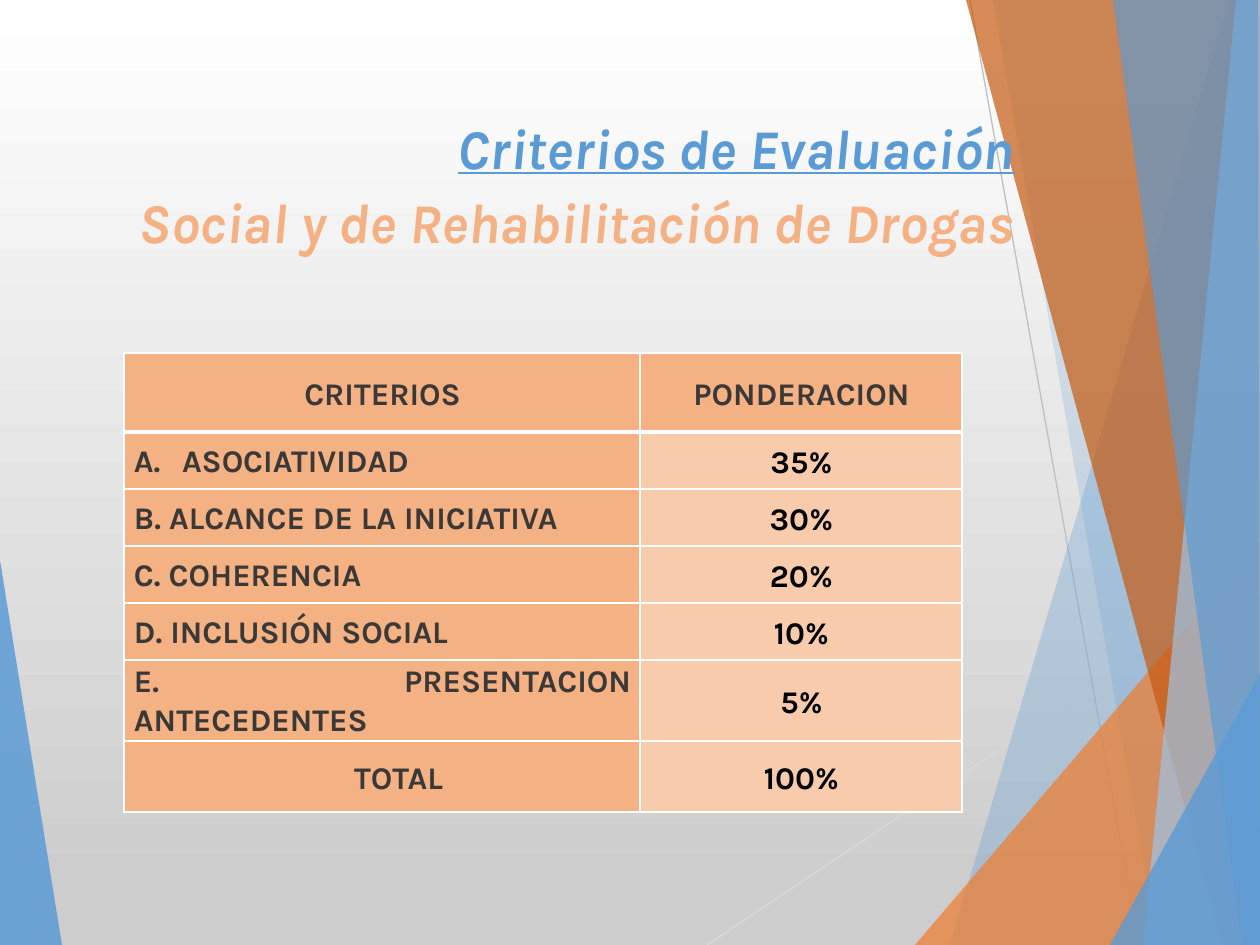
from lxml import etree
from pptx import Presentation
from pptx.dml.color import RGBColor
from pptx.enum.shapes import MSO_CONNECTOR
from pptx.enum.text import MSO_ANCHOR, PP_ALIGN
from pptx.oxml.ns import qn
from pptx.util import Pt

PX = 914400 / 126
FONT = "Karla"
STRAIGHT = MSO_CONNECTOR.STRAIGHT
TOP, MIDDLE = MSO_ANCHOR.TOP, MSO_ANCHOR.MIDDLE
CENTER, RIGHT, JUSTIFY = PP_ALIGN.CENTER, PP_ALIGN.RIGHT, PP_ALIGN.JUSTIFY

WHITE = RGBColor(0xFF, 0xFF, 0xFF)
BLACK = RGBColor(0x00, 0x00, 0x00)
DARK = RGBColor(0x3B, 0x38, 0x38)
BACK_GREY = RGBColor(0xCD, 0xCD, 0xCD)
LIGHT_GREY = RGBColor(0xD9, 0xD9, 0xD9)
MID_GREY = RGBColor(0xBF, 0xBF, 0xBF)
BLUE = RGBColor(0x5B, 0x9B, 0xD5)
LIGHT_BLUE = RGBColor(0x9D, 0xC3, 0xE6)
ORANGE = RGBColor(0xED, 0x7D, 0x31)
DARK_ORANGE = RGBColor(0xC5, 0x5A, 0x11)
PEACH = RGBColor(0xF4, 0xB1, 0x83)
PALE_PEACH = RGBColor(0xF8, 0xCB, 0xAD)


def px(length):
    return round(length * PX)


def add_text(paragraph, text, size, color):
    run = paragraph.add_run()
    run.text = text
    run.font.name = FONT
    run.font.size = Pt(size)
    run.font.bold = True
    run.font.color.rgb = color
    return run


presentation = Presentation()
presentation.slide_width = px(1260)
presentation.slide_height = px(945)
slide = presentation.slides.add_slide(presentation.slide_layouts[6])

background = slide.background.fill
background.gradient()
background.gradient_angle = 270
for stop, position, color in zip(background.gradient_stops, (0, 0.94), (WHITE, BACK_GREY)):
    stop.position = position
    stop.color.rgb = color

# Thin lines behind the facets
for x1, y1, x2, y2, color in (
    (707, 945, 1260, 576, LIGHT_GREY),
    (970, 0, 1139, 945, MID_GREY),
):
    line = slide.shapes.add_connector(STRAIGHT, px(x1), px(y1), px(x2), px(y2))
    line.line.color.rgb = color
    line.line.width = Pt(0.75)
    etree.SubElement(line._element.spPr, qn("a:effectLst"))

# Translucent facets: colour, opacity in percent, corners
FACETS = (
    (BLUE, 85, [(0, 560), (62, 945), (0, 945)]),
    (BLUE, 30, [(1229, 0), (950, 945), (1260, 945), (1260, 0)]),
    (BLUE, 20, [(993, 0), (1158, 945), (1260, 945), (1260, 0)]),
    (ORANGE, 72, [(915, 945), (1260, 541), (1260, 945)]),
    (DARK_ORANGE, 70, [(966, 0), (1222, 945), (1260, 945), (1260, 0)]),
    (LIGHT_BLUE, 70, [(1236, 0), (1143, 945), (1260, 945), (1260, 0)]),
    (BLUE, 65, [(1113, 0), (1242, 945), (1260, 945), (1258, 0)]),
    (BLUE, 80, [(1110, 945), (1260, 674), (1260, 945)]),
)
for color, opacity, corners in FACETS:
    builder = slide.shapes.build_freeform(*corners[0], scale=PX)
    builder.add_line_segments(corners[1:], close=True)
    facet = builder.convert_to_shape()
    facet.shadow.inherit = False
    facet.fill.solid()
    facet.fill.fore_color.rgb = color
    facet.line.fill.background()
    rgb = facet._element.spPr.find(qn("a:solidFill")).find(qn("a:srgbClr"))
    etree.SubElement(rgb, qn("a:alpha"), val=str(opacity * 1000))

title = slide.shapes.add_textbox(px(15), px(115), px(1012), px(149)).text_frame
title.word_wrap = True
title.vertical_anchor = TOP
for index, (text, color) in enumerate((
    ("Criterios de Evaluación", BLUE),
    ("Social y de Rehabilitación de Drogas", PEACH),
)):
    paragraph = title.add_paragraph() if index else title.paragraphs[0]
    paragraph.alignment = RIGHT
    paragraph.line_spacing = 0.9
    paragraph.space_before = Pt(7.5 if index else 0)
    run = add_text(paragraph, text, 32, color)
    run.font.italic = True
    run.font.underline = index == 0

CRITERIA = (
    ("CRITERIOS", "PONDERACION"),
    ("ASOCIATIVIDAD", "35%"),
    ("B. ALCANCE DE LA INICIATIVA", "30%"),
    ("C. COHERENCIA", "20%"),
    ("D. INCLUSIÓN SOCIAL", "10%"),
    ("E. PRESENTACION ANTECEDENTES", "5%"),
    ("TOTAL", "100%"),
)
COLUMN_WIDTHS = (516, 322)
ROW_HEIGHTS = (79, 57, 57, 57, 57, 57, 71)
LAST = len(CRITERIA) - 1

table = slide.shapes.add_table(
    len(CRITERIA), 2, px(124), px(353), px(sum(COLUMN_WIDTHS)), px(sum(ROW_HEIGHTS))
).table
for column, width in zip(table.columns, COLUMN_WIDTHS):
    column.width = px(width)
for row, height in zip(table.rows, ROW_HEIGHTS):
    row.height = px(height)

for r, values in enumerate(CRITERIA):
    for c, text in enumerate(values):
        cell = table.cell(r, c)
        cell.vertical_anchor = MIDDLE
        cell.margin_left, cell.margin_right = px(10), px(9)
        cell.margin_top = cell.margin_bottom = 0

        properties = cell._tc.get_or_add_tcPr()
        for side in ("lnL", "lnR", "lnT", "lnB"):
            thick = (r, side) in ((0, "lnB"), (1, "lnT"))
            border = etree.SubElement(
                properties, qn("a:" + side), w=str(Pt(3 if thick else 1))
            )
            fill = etree.SubElement(border, qn("a:solidFill"))
            etree.SubElement(fill, qn("a:srgbClr"), val=str(WHITE))

        is_weight = c == 1 and r > 0
        is_criterion = c == 0 and 0 < r < LAST
        cell.fill.solid()
        cell.fill.fore_color.rgb = PALE_PEACH if is_weight else PEACH

        paragraph = cell.text_frame.paragraphs[0]
        paragraph_properties = paragraph._p.get_or_add_pPr()
        if (r, c) == (1, 0):
            paragraph_properties.set("marL", str(px(48)))
            paragraph_properties.set("indent", str(px(-48)))
            etree.SubElement(
                paragraph_properties, qn("a:buFont"), typeface=FONT
            )
            etree.SubElement(
                paragraph_properties, qn("a:buAutoNum"), type="alphaUcPeriod"
            )
        elif (r, c) == (LAST, 0):
            paragraph_properties.set("marL", str(px(32)))
        paragraph.alignment = JUSTIFY if is_criterion else CENTER
        paragraph.line_spacing = 1.07 if is_criterion else 1.15
        add_text(paragraph, text, 18, BLACK if is_weight else DARK)

presentation.save("out.pptx")
